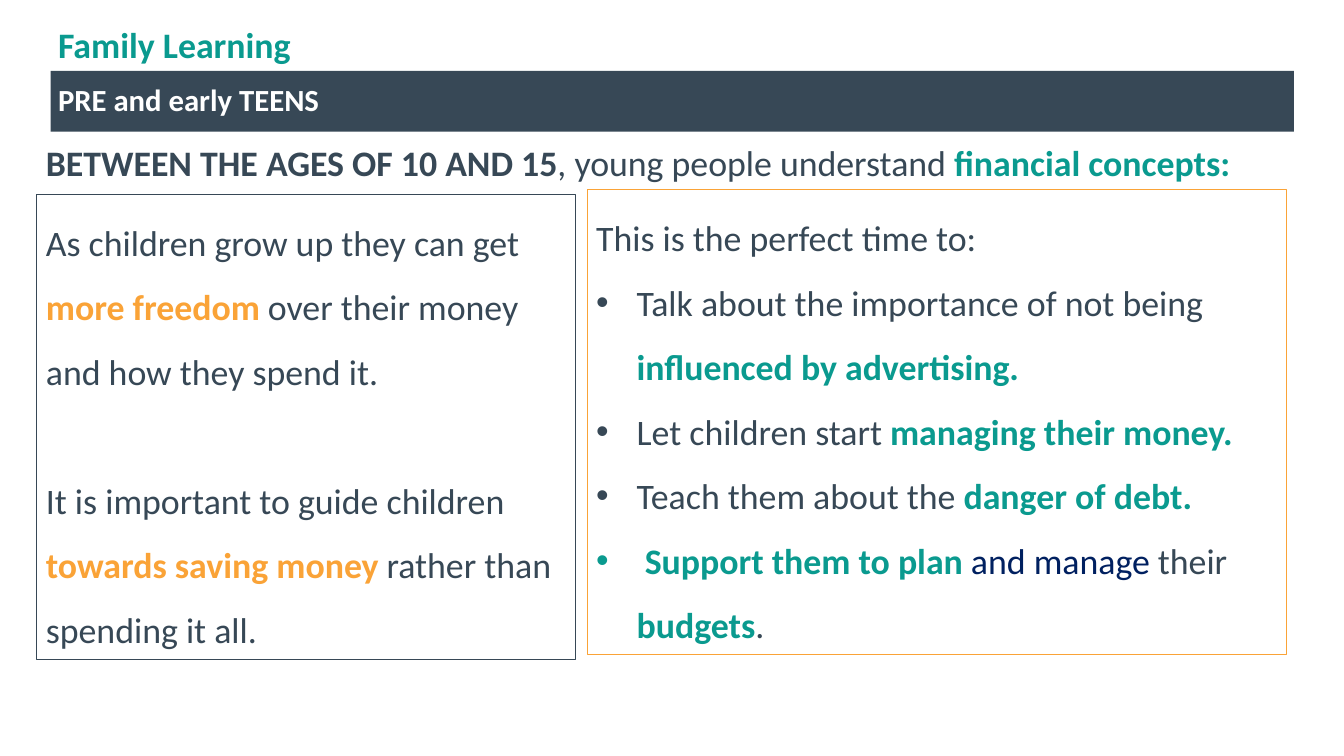
from lxml.etree import SubElement
from pptx import Presentation
from pptx.dml.color import RGBColor
from pptx.enum.shapes import MSO_SHAPE
from pptx.enum.text import MSO_ANCHOR, PP_ALIGN
from pptx.oxml.ns import qn
from pptx.util import Inches, Pt

SLATE, TEAL, ORANGE, NAVY, WHITE = "374856", "0A9A8F", "FAA337", "002060", "FFFFFF"

# Each paragraph: its runs as (text, colour, bold), then optional paragraph formats
INTRO = [
    {"runs": [("BETWEEN THE AGES OF 10 AND 15", SLATE, True),
              (", young people understand ", SLATE, False),
              ("financial concepts:", TEAL, True)]},
]
FREEDOM = [
    {"runs": [("As children grow up they can get ", SLATE, False),
              ("more freedom ", ORANGE, True),
              ("over their money and how they spend it.", SLATE, False)]},
    {"runs": [("It is important to guide children ", SLATE, False),
              ("towards saving money", ORANGE, True),
              (" rather than spending it all.", SLATE, False)],
     "format": {"space_before": Pt(50.5)}},
]
ADVICE = [
    {"runs": [("This is the perfect time to:", SLATE, False)]},
    {"runs": [("Talk about the importance of not being ", SLATE, False),
              ("influenced by advertising.", TEAL, True)], "bullet": SLATE},
    {"runs": [("Let children start ", SLATE, False),
              ("managing their money.", TEAL, True)], "bullet": SLATE},
    {"runs": [("Teach them about the ", SLATE, False),
              ("danger of debt.", TEAL, True)], "bullet": SLATE},
    {"runs": [(" Support them to plan ", TEAL, True),
              ("and manage ", NAVY, False),
              ("their ", SLATE, False),
              ("budgets", TEAL, True),
              (".", SLATE, False)], "bullet": TEAL},
]


def rgb(colour):
    return RGBColor.from_string(colour)


def apply(target, formats):
    for name, value in formats.items():
        setattr(target, name, value)


def add_bullet(paragraph, colour):
    properties = paragraph._p.get_or_add_pPr()
    properties.set("marL", str(Inches(0.44)))
    properties.set("indent", str(-Inches(0.44)))
    bullet_colour = SubElement(properties, qn("a:buClr"))
    SubElement(bullet_colour, qn("a:srgbClr"), val=colour)
    SubElement(properties, qn("a:buFont"), typeface="Arial")
    SubElement(properties, qn("a:buChar"), char="•")


def write(frame, paragraphs, size=28, spacing=1.5, inset=0.1, anchor=MSO_ANCHOR.TOP):
    apply(frame, {"word_wrap": True, "vertical_anchor": anchor,
                  "margin_left": Inches(inset), "margin_right": Inches(inset),
                  "margin_top": Inches(0.05), "margin_bottom": Inches(0.05)})
    for index, content in enumerate(paragraphs):
        paragraph = frame.add_paragraph() if index else frame.paragraphs[0]
        if "bullet" in content:
            add_bullet(paragraph, content["bullet"])
        apply(paragraph, {"alignment": PP_ALIGN.LEFT, "line_spacing": spacing,
                          **content.get("format", {})})
        for text, colour, bold in content["runs"]:
            run = paragraph.add_run()
            run.text = text
            apply(run.font, {"name": "Calibri", "size": Pt(size), "bold": bold})
            run.font.color.rgb = rgb(colour)


def add_text(slide, place, paragraphs, **style):
    box = slide.shapes.add_textbox(*map(Inches, place))
    write(box.text_frame, paragraphs, **style)


def add_panel(slide, place, paragraphs, fill=None, outline=None, **style):
    panel = slide.shapes.add_shape(MSO_SHAPE.RECTANGLE, *map(Inches, place))
    panel.shadow.inherit = False
    if fill:
        panel.fill.solid()
        panel.fill.fore_color.rgb = rgb(fill)
    else:
        panel.fill.background()
    if outline:
        panel.line.color.rgb = rgb(outline)
        panel.line.width = Pt(0.75)
    else:
        panel.line.fill.background()
    write(panel.text_frame, paragraphs, **style)


def main():
    deck = Presentation()
    # The page is a whole number of points: 14.58 by 8.21 inches
    deck.slide_width, deck.slide_height = Pt(1050), Pt(591)
    slide = deck.slides.add_slide(deck.slide_layouts[6])

    # Heading: banner and title
    heading = {"spacing": 0.9, "inset": 0.08, "anchor": MSO_ANCHOR.MIDDLE}
    add_panel(slide, (0.55, 0.77, 13.49, 0.66),
              [{"runs": [("PRE and early TEENS", WHITE, True)],
                "format": {"alignment": PP_ALIGN.JUSTIFY}}],
              fill=SLATE, size=24, **heading)
    add_text(slide, (0.55, 0.11, 13.48, 0.79),
             [{"runs": [("Family Learning", TEAL, True)]}], **heading)

    # Introduction
    add_text(slide, (0.4, 1.25, 13.48, 0.81), INTRO)

    # Outlined panels
    add_panel(slide, (0.4, 2.11, 5.84, 5.05), FREEDOM, outline=SLATE)
    add_panel(slide, (6.37, 2.06, 7.59, 5.05), ADVICE, outline=ORANGE)

    deck.save("out.pptx")


if __name__ == "__main__":
    main()
